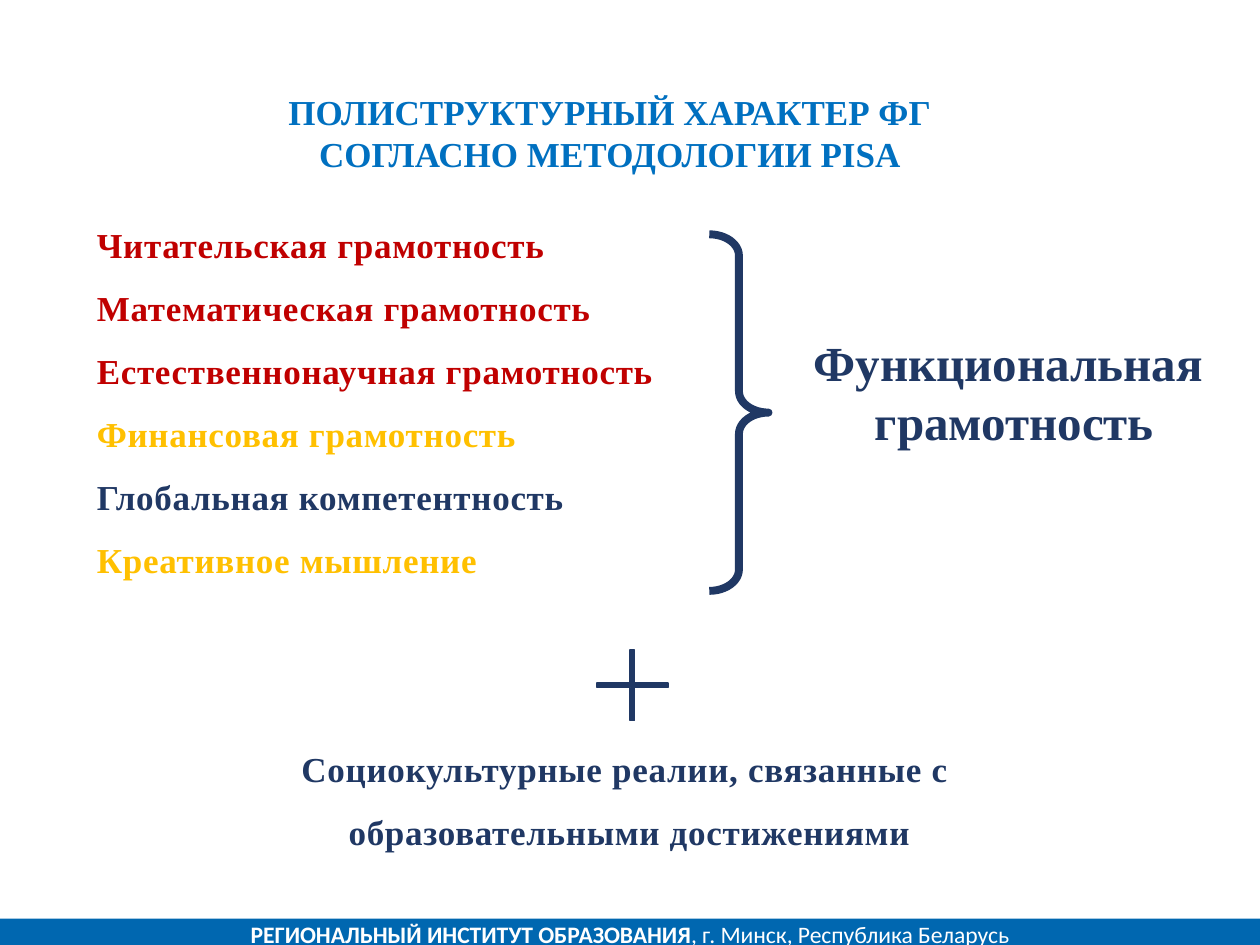
from pptx import Presentation
from pptx.dml.color import RGBColor
from pptx.enum.shapes import MSO_SHAPE as Kind
from pptx.enum.text import MSO_ANCHOR as Anchor, MSO_AUTO_SIZE as Fit, PP_ALIGN as Align
from pptx.util import Inches, Pt

WHITE = RGBColor(0xFF, 0xFF, 0xFF)
BAND = RGBColor(0x00, 0x67, 0xB0)
BLUE = RGBColor(0x00, 0x70, 0xC0)
RED = RGBColor(0xC0, 0x00, 0x00)
GOLD = RGBColor(0xFF, 0xC0, 0x00)
NAVY = RGBColor(0x20, 0x38, 0x64)

SKILLS = [
    ("Читательская грамотность", RED),
    ("Математическая грамотность", RED),
    ("Естественнонаучная грамотность", RED),
    ("Финансовая грамотность", GOLD),
    ("Глобальная компетентность", NAVY),
    ("Креативное мышление", GOLD),
]


def style(run, size, color, face="Times New Roman", bold=True):
    font = run.font
    font.name, font.size, font.bold = face, Pt(size), bold
    font.color.rgb = color


def add_text(slide, box, lines, size=20, align=Align.CENTER, wrap=False, loose=False):
    """Add (text, colour) lines; loose gives wide line and letter spacing."""
    frame = slide.shapes.add_textbox(*map(Inches, box)).text_frame
    frame.word_wrap = wrap
    frame.auto_size = Fit.SHAPE_TO_FIT_TEXT
    frame.text = "\n".join(text for text, _ in lines)
    for para, (_, color) in zip(frame.paragraphs, lines):
        para.alignment = align
        run = para.runs[0]
        style(run, size, color)
        if loose:
            para.line_spacing = 1.5
            run._r.get_or_add_rPr().set("spc", "40")


def add_form(slide, kind, box, fill=None, line=None, width=1, adjust=()):
    form = slide.shapes.add_shape(kind, *map(Inches, box))
    form.shadow.inherit = False
    for i, value in enumerate(adjust):
        form.adjustments[i] = value
    if fill is None:
        form.fill.background()
    else:
        form.fill.solid()
        form.fill.fore_color.rgb = fill
    if line is None:
        form.line.fill.background()
    else:
        form.line.color.rgb = line
        form.line.width = Pt(width)
    return form


def add_footer(slide):
    band = add_form(slide, Kind.RECTANGLE, (0, 7.29, 10, 0.24), fill=BAND)
    frame = band.text_frame
    frame.vertical_anchor = Anchor.MIDDLE
    para = frame.paragraphs[0]
    para.alignment = Align.CENTER
    parts = [("РЕГИОНАЛЬНЫЙ ИНСТИТУТ ОБРАЗОВАНИЯ", True),
             (", г. Минск, Республика Беларусь", False)]
    for text, bold in parts:
        run = para.add_run()
        run.text = text
        style(run, 13.5, WHITE, "Calibri", bold)


def main():
    deck = Presentation()
    deck.slide_width, deck.slide_height = Inches(10), Inches(7.5)
    slide = deck.slides.add_slide(deck.slide_layouts[6])

    add_footer(slide)
    add_text(slide, (2.09, 0.67, 5.5, 0.77),
             [("ПОЛИСТРУКТУРНЫЙ ХАРАКТЕР ФГ", BLUE),
              ("СОГЛАСНО МЕТОДОЛОГИИ PISA", BLUE)])
    add_text(slide, (0.67, 1.56, 4.66, 3.13), SKILLS, align=Align.LEFT, loose=True)
    add_form(slide, Kind.RIGHT_BRACE, (5.63, 1.86, 0.47, 2.83),
             line=NAVY, width=4.5, adjust=(0.36, 0.5))
    add_text(slide, (6.34, 2.59, 3.42, 1.04),
             [("Функциональная ", NAVY), ("грамотность", NAVY)], size=28)
    add_text(slide, (2.28, 5.72, 5.43, 1.05),
             [("Социокультурные реалии, связанные с ", NAVY),
              ("образовательными достижениями", NAVY)], wrap=True, loose=True)
    add_form(slide, Kind.CROSS, (4.74, 5.16, 0.56, 0.56),
             fill=NAVY, line=NAVY, adjust=(0.47,))

    deck.save("out.pptx")


if __name__ == "__main__":
    main()
